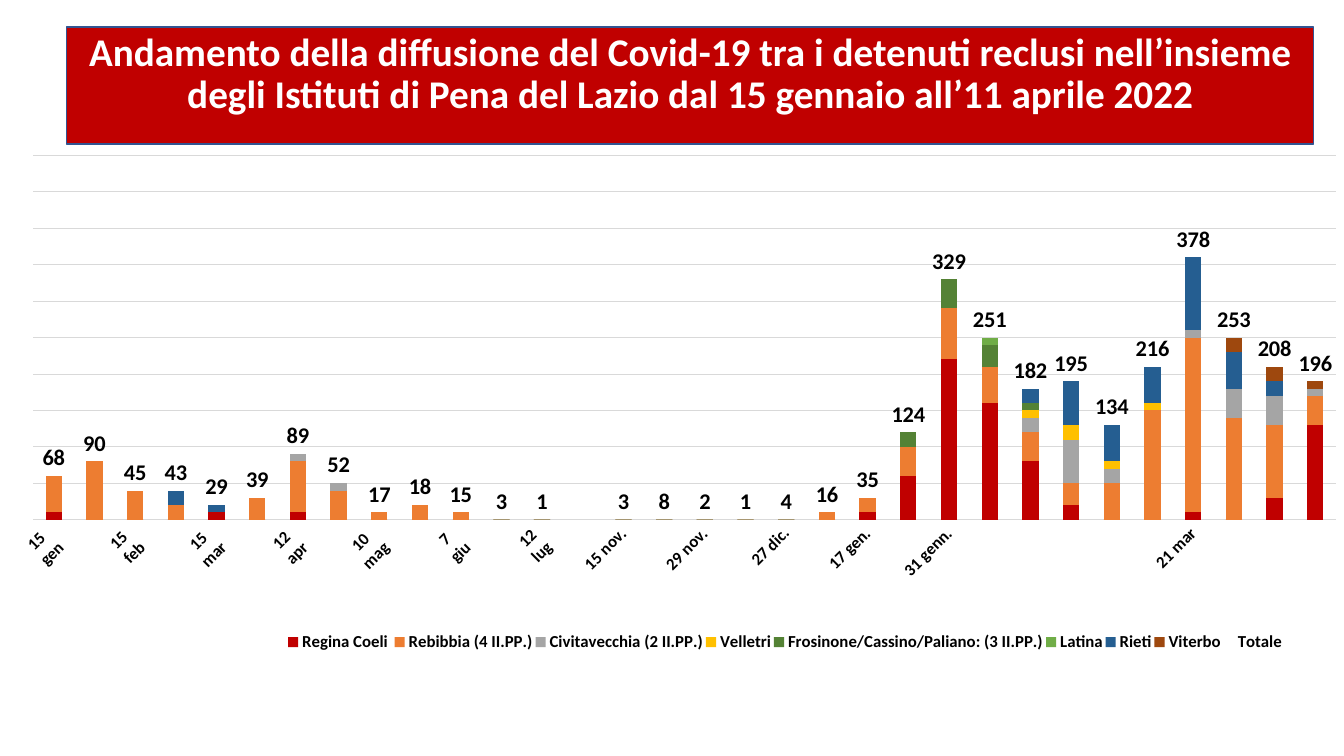
import pptx
import pptx.chart.data
import pptx.dml.color
import pptx.enum.chart
import pptx.enum.shapes
import pptx.enum.text
import pptx.oxml
import pptx.oxml.ns
import pptx.util

Inches = pptx.util.Inches
Pt = pptx.util.Pt

TITLE = ("Andamento della diffusione del Covid-19 tra i detenuti reclusi nell’insieme "
         "degli Istituti di Pena del Lazio dal 15 gennaio all’11 aprile 2022")
DATES = ["15\n gen", "29 \ngen", "15 \nfeb", "1 \nmar", "15 \nmar", "29 \nmar", "12 \napr",
         "26 \napr", "10 \nmag", "24 \nmag", "7 \ngiu", "21 \ngiu", "12\nlug", "", "15 nov.",
         " 22 nov.", "29 nov.", "", "27 dic.", "10 gen.", "17 gen.", "", "31 genn.", "", "",
         "21 feb.", "", "", "21 mar", "", "", "11 apr."]
QUIET = [0] * 13 + [None] + [0] * 7
PRISONS = [
    ("Regina Coeli ", "C00000",
     [10, 0, 0, 0, 10, 0, 10, 0, 0, 0, 0, 0, 0, None, 0, 0, 0, 0, 0, 0, 10,
      60, 220, 160, 80, 20, 0, 0, 10, 0, 30, 130]),
    ("Rebibbia (4 II.PP.)", "ED7D31",
     [50, 80, 40, 20, 0, 30, 70, 40, 10, 20, 10, 0, 0, None, 0, 0, 0, 0, 0, 10, 20,
      40, 70, 50, 40, 30, 50, 150, 240, 140, 100, 40]),
    ("Civitavecchia (2 II.PP.)", "A5A5A5",
     [0, 0, 0, 0, 0, 0, 10, 10, 0, 0, 0, 0, 0, None, 0, 0, 0, None, 0, 0, 0,
      0, 0, 0, 20, 60, 20, 0, 10, 40, 40, 10]),
    ("Velletri", "FFC000", QUIET + [0, 0, 0, 10, 20, 10, 10, 0, 0, 0, 0]),
    ("Frosinone/Cassino/Paliano: (3 II.PP.)", "548235",
     QUIET + [20, 40, 30, 10, 0, 0, 0, 0, 0, 0, 0]),
    ("Latina", "70AD47", QUIET + [0, 0, 10, 0, 0, 0, 0, 0, 0, 0, 0]),
    ("Rieti", "255E91",
     [0, 0, 0, 20, 10] + QUIET[5:] + [0, 0, 0, 20, 60, 50, 50, 100, 50, 20, 0]),
    ("Viterbo", "9E480E", QUIET + [0, 0, 0, 0, 0, 0, 0, 0, 20, 20, 10]),
]
TOTALS = [68, 90, 45, 43, 29, 39, 89, 52, 17, 18, 15, 3, 1, None, 3, 8, 2, 1, 4, 16, 35,
          124, 329, 251, 182, 195, 134, 216, 378, 253, 208, 196]


def color(value):
    return pptx.dml.color.RGBColor.from_string(value)


def style_font(font, size, hex_color="000000", bold=True):
    font.name = "Calibri"
    font.size = Pt(size)
    font.bold = bold
    font.color.rgb = color(hex_color)


def style_line(line, hex_color, width):
    line.color.rgb = color(hex_color)
    line.width = Pt(width)


def manual_layout(x, y, w, h, inner=False):
    target = '<c:layoutTarget val="inner"/>' if inner else ""
    sizes = "".join(f'<c:{tag} val="{val}"/>' for tag, val in zip("xywh", (x, y, w, h)))
    return pptx.oxml.parse_xml(
        f'<c:layout {pptx.oxml.ns.nsdecls("c")}><c:manualLayout>{target}'
        f'<c:xMode val="edge"/><c:yMode val="edge"/>{sizes}</c:manualLayout></c:layout>')


def set_layout(parent, layout, index):
    for old in parent.findall(pptx.oxml.ns.qn("c:layout")):
        parent.remove(old)
    parent.insert(index, layout)


def add_title(s):
    sp = s.shapes.add_shape(pptx.enum.shapes.MSO_SHAPE.RECTANGLE,
                            Inches(0.66), Inches(0.27), Inches(12.37), Inches(1.16))
    sp.shadow.inherit = False
    sp.fill.solid()
    sp.fill.fore_color.rgb = color("C00000")
    style_line(sp.line, "325491", 1)
    tf = sp.text_frame
    tf.word_wrap = True
    tf.vertical_anchor = pptx.enum.text.MSO_ANCHOR.TOP
    p = tf.paragraphs[0]
    p.alignment = pptx.enum.text.PP_ALIGN.CENTER
    p.line_spacing = 0.9
    p.space_before = Pt(10)
    r = p.add_run()
    r.text = TITLE
    style_font(r.font, 28, "FFFFFF")


def style_axes(chart):
    dates = chart.category_axis
    dates.major_tick_mark = pptx.enum.chart.XL_TICK_MARK.NONE
    style_line(dates.format.line, "D9D9D9", 0.75)
    style_font(dates.tick_labels.font, 12)
    body = dates._element.txPr.find(pptx.oxml.ns.qn("a:bodyPr"))
    body.set("rot", "-2700000")
    body.set("vert", "horz")
    values = chart.value_axis
    values.visible = False
    values.minimum_scale = 0
    values.maximum_scale = 500
    values.major_unit = 50
    values.has_major_gridlines = True
    style_line(values.major_gridlines.format.line, "D9D9D9", 0.75)


def style_series(plot):
    plot.gap_width = 150
    plot.overlap = 100
    plot.vary_by_categories = False
    *prisons, total = plot.series
    for series, (name, hex_color, values) in zip(prisons, PRISONS):
        series.format.fill.solid()
        series.format.fill.fore_color.rgb = color(hex_color)
    total.format.fill.background()
    total.format.line.fill.background()
    labels = total.data_labels
    labels.show_value = True
    labels.position = pptx.enum.chart.XL_LABEL_POSITION.INSIDE_BASE
    style_font(labels.font, 16)


def add_legend(chart):
    chart.has_legend = True
    legend = chart.legend
    legend.position = pptx.enum.chart.XL_LEGEND_POSITION.BOTTOM
    legend.include_in_layout = False
    style_font(legend.font, 12)
    set_layout(legend._element, manual_layout(0.205, 0.84, 0.75, 0.06), 1)


def add_cases_chart(s):
    data = pptx.chart.data.CategoryChartData(number_format="General")
    data.categories = DATES
    for name, hex_color, values in PRISONS:
        data.add_series(name, values)
    data.add_series("Totale", TOTALS)
    chart = s.shapes.add_chart(pptx.enum.chart.XL_CHART_TYPE.COLUMN_STACKED, Inches(0.12),
                               Inches(1.43), Inches(13.22), Inches(5.68), data).chart
    chart.has_title = False
    style_font(chart.font, 10, bold=False)
    style_axes(chart)
    style_series(chart.plots[0])
    add_legend(chart)
    plot_area = chart._chartSpace.chart.plotArea
    set_layout(plot_area, manual_layout(0.016, 0.02, 0.977, 0.636, inner=True), 0)


def main():
    prs = pptx.Presentation()
    prs.slide_width = Inches(13.33)
    prs.slide_height = Inches(7.5)
    s = prs.slides.add_slide(prs.slide_layouts[6])
    add_cases_chart(s)
    add_title(s)
    prs.save("out.pptx")


if __name__ == "__main__":
    main()
